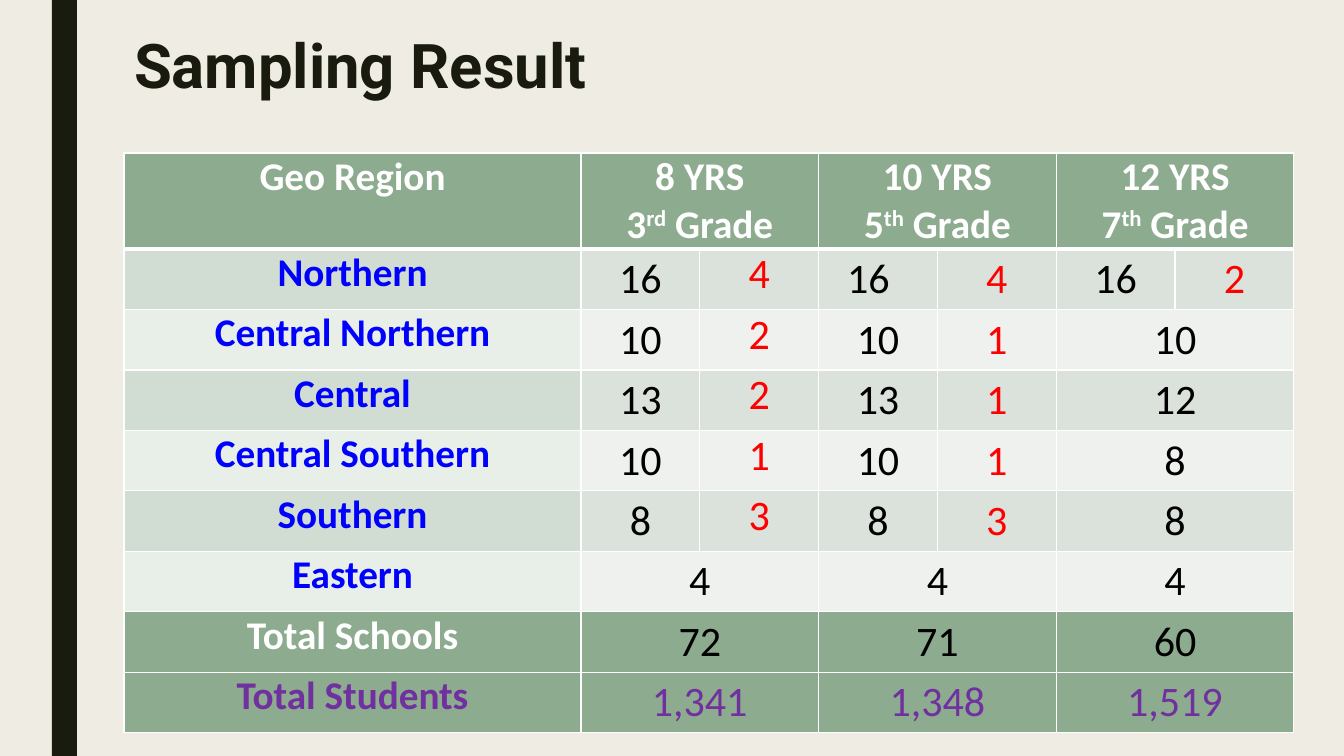
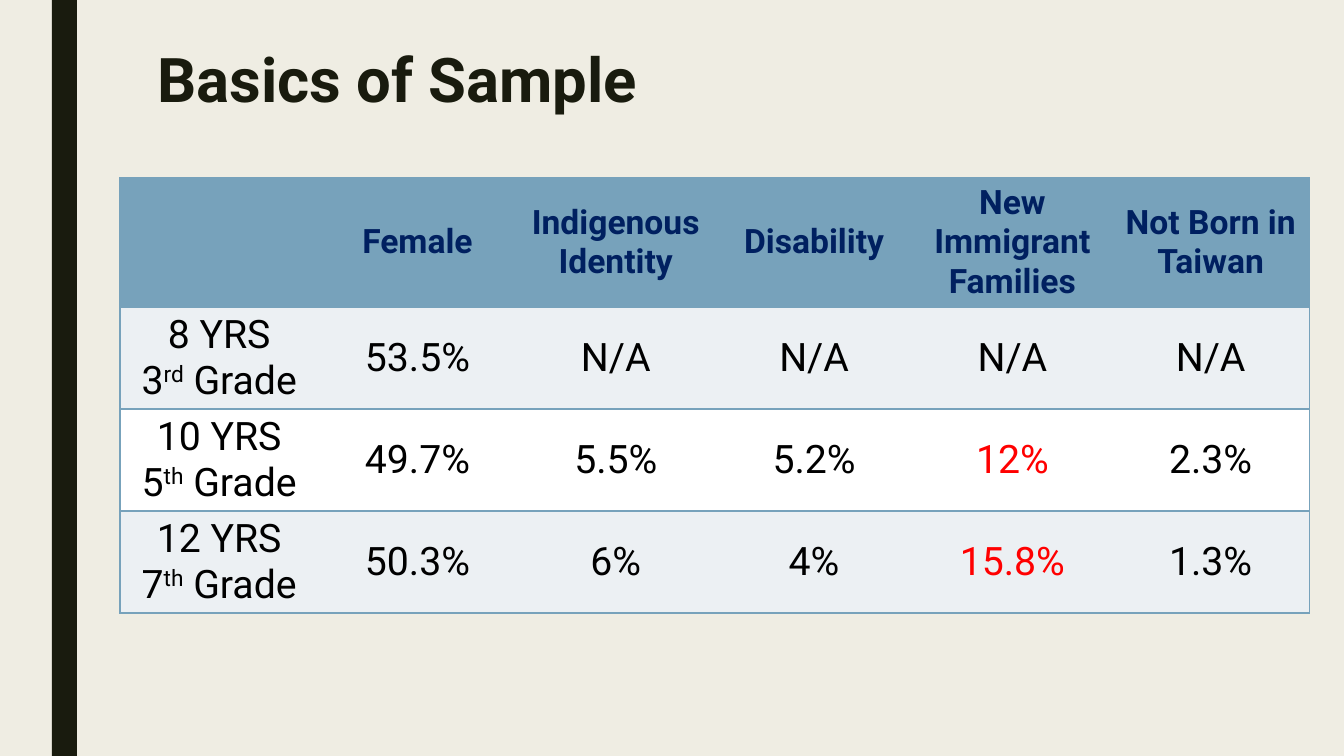
from dataclasses import dataclass

from lxml import etree
from pptx import Presentation
from pptx import util as u
from pptx.dml.color import RGBColor
from pptx.enum import shapes, text
from pptx.oxml import ns

SCALE = 914400 / 100.8
SIDES = ("lnL", "lnR", "lnT", "lnB")
GRADES = ["8 YRS\n3^rd^ Grade", "10 YRS\n5^th^ Grade", "12 YRS\n7^th^ Grade"]


@dataclass(frozen=True)
class Theme:
    """Colours, fonts and type sizes of the deck."""
    paper: str = "EFEDE3"
    ink: str = "191B0E"
    white: str = "FFFFFF"
    black: str = "000000"
    red: str = "FF0000"
    blue: str = "0000FF"
    navy: str = "002060"
    purple: str = "7030A0"
    green: str = "8DAB8E"
    label_bands: tuple = ("D1DDD2", "E8EEE8")
    value_bands: tuple = ("DBE2DB", "EEF1EE")
    steel: str = "77A2BB"
    sample_bands: tuple = ("ECF0F3", "FFFFFF")
    heading_font: str = "Roboto"
    table_font: str = "Calibri"
    title_size: int = 44
    value_size: int = 30
    label_size: int = 28
    header_size: int = 24


THEME = Theme()


def px(length):
    """Turn pixels into EMU."""
    return u.Emu(round(length * SCALE))


def write(frame, content, font, size, color, bold=False):
    """Write lines into a text frame; text between carets is raised."""
    for index, line in enumerate(content.split("\n")):
        para = frame.add_paragraph() if index else frame.paragraphs[0]
        para.font.name, para.font.size, para.font.bold = font, u.Pt(size), bold
        para.alignment = text.PP_ALIGN.CENTER
        for part, piece in enumerate(line.split("^")):
            span = para.add_run()
            span.text = piece
            span.font.color.rgb = RGBColor.from_string(color)
            if part % 2:
                span._r.get_or_add_rPr().set("baseline", "30000")


def fill_cell(cell, color, margins):
    """Set the fill and the horizontal and vertical margins of a cell."""
    cell.fill.solid()
    cell.fill.fore_color.rgb = RGBColor.from_string(color)
    cell.margin_left = cell.margin_right = px(margins[0])
    cell.margin_top = cell.margin_bottom = px(margins[1])


def border_cell(cell, lines):
    """Draw the left, right, top and bottom lines, each (colour, points) or None."""
    properties = cell._tc.get_or_add_tcPr()
    for index, (side, line) in enumerate(zip(SIDES, lines)):
        edge = etree.Element(ns.qn(f"a:{side}"))
        if line:
            edge.set("w", str(u.Pt(line[1])))
            solid = etree.SubElement(edge, ns.qn("a:solidFill"))
            etree.SubElement(solid, ns.qn("a:srgbClr"), val=line[0])
        else:
            edge.set("w", "0")
            etree.SubElement(edge, ns.qn("a:noFill"))
        properties.insert(index, edge)


def add_grid(page, box, rows, columns, header, label_width):
    """Add a plain table with one header row and one label column."""
    left, top, width, height = box
    table = page.shapes.add_table(rows, columns, *map(px, box)).table
    table.first_row = table.horz_banding = False
    for index, row in enumerate(table.rows):
        row.height = px((height - header) / (rows - 1) if index else header)
    for index, column in enumerate(table.columns):
        column.width = px((width - label_width) / (columns - 1) if index else label_width)
    return table


def style_master(deck, page):
    """Give the master its background and the vertical band."""
    master = deck.slide_master
    master.background.fill.solid()
    master.background.fill.fore_color.rgb = RGBColor.from_string(THEME.paper)
    band = page.shapes.add_shape(shapes.MSO_SHAPE.RECTANGLE, px(52), 0, px(25), deck.slide_height)
    band.shadow.inherit = False
    band.fill.solid()
    band.fill.fore_color.rgb = RGBColor.from_string(THEME.ink)
    band.line.fill.background()
    master.shapes.element.insert(2, band.element)


def add_title(page, content, box):
    """Place and format the title placeholder."""
    title = page.shapes.title
    title.left, title.top, title.width, title.height = map(px, box)
    frame = title.text_frame
    frame.auto_size = text.MSO_AUTO_SIZE.NONE
    frame.vertical_anchor = text.MSO_ANCHOR.TOP
    write(frame, content, THEME.heading_font, THEME.title_size, THEME.ink, True)
    frame.paragraphs[0].alignment = text.PP_ALIGN.LEFT
    frame.paragraphs[0].line_spacing = 0.89


def region_table(page, box):
    """Add the table of schools by region; each grade spans two columns."""
    regions = [
        ("Northern", "16", "4", "16", "4", "16", "2"),
        ("Central Northern", "10", "2", "10", "1", "10", None),
        ("Central", "13", "2", "13", "1", "12", None),
        ("Central Southern", "10", "1", "10", "1", "8", None),
        ("Southern", "8", "3", "8", "3", "8", None),
        ("Eastern", "4", None, "4", None, "4", None),
    ]
    totals = [
        ("Total Schools", "72", None, "71", None, "60", None),
        ("Total Students", "1,341", None, "1,348", None, "1,519", None),
    ]
    header = ["Geo Region"]
    for grade in GRADES:
        header += [grade, None]
    records = [header, *regions, *totals]
    table = add_grid(page, box, len(records), len(header), 96, 457)
    thin, thick = (THEME.white, 1), (THEME.white, 3)
    for row, record in enumerate(records):
        solid = row == 0 or row > len(regions)
        for column, content in enumerate(record):
            cell = table.cell(row, column)
            bands = THEME.value_bands if column else THEME.label_bands
            fill_cell(cell, THEME.green if solid else bands[(row - 1) % 2], (2, 0))
            border_cell(cell, (thin, thin, thick if row == 1 else thin, thick if row == 0 else thin))
            if content is None:
                table.cell(row, column - 1).merge(cell)
                continue
            is_label = row == 0 or column == 0
            if row == len(records) - 1:
                color = THEME.purple
            elif is_label:
                color = THEME.white if solid else THEME.blue
            else:
                color = THEME.black if column % 2 else THEME.red
            size = THEME.label_size if is_label else THEME.value_size
            write(cell.text_frame, content, THEME.table_font, size, color, is_label)
            at_top = is_label or column == 2
            cell.vertical_anchor = text.MSO_ANCHOR.TOP if at_top else text.MSO_ANCHOR.MIDDLE
    table.cell(1, 3).margin_right = px(21)


def sample_table(page, box):
    """Add the table of sample shares by grade."""
    header = ("", "Female", "Indigenous Identity", "Disability",
              "New Immigrant Families", "Not Born in Taiwan")
    shares = [
        ("53.5%", "N/A", "N/A", "N/A", "N/A"),
        ("49.7%", "5.5%", "5.2%", "12%", "2.3%"),
        ("50.3%", "6%", "4%", "15.8%", "1.3%"),
    ]
    records = [header, *((grade, *share) for grade, share in zip(GRADES, shares))]
    last = len(header) - 1
    table = add_grid(page, box, len(records), len(header), 129, box[2] / len(header))
    line = (THEME.steel, 1)
    for row, record in enumerate(records):
        for column, content in enumerate(record):
            cell = table.cell(row, column)
            fill_cell(cell, THEME.sample_bands[(row - 1) % 2] if row else THEME.steel, (10, 5))
            border_cell(cell, (None if column else line, line if column == last else None, line, line))
            cell.vertical_anchor = text.MSO_ANCHOR.MIDDLE
            if not content:
                continue
            if row == 0:
                color, size = THEME.navy, THEME.header_size
            else:
                notable = column == 4 and content != "N/A"
                color, size = THEME.red if notable else THEME.black, THEME.label_size
            write(cell.text_frame, content, THEME.heading_font, size, color, row == 0)


def main():
    """Build and save the deck."""
    deck = Presentation()
    deck.slide_width, deck.slide_height = px(1344), px(756)
    layout = deck.slide_layouts[5]
    result, basics = (deck.slides.add_slide(layout) for _ in range(2))
    style_master(deck, result)
    add_title(result, "Sampling Result", (124, 31, 1058, 163))
    region_table(result, (124, 153, 1170, 580))
    add_title(basics, "Basics of Sample", (147, 45, 1058, 163))
    sample_table(basics, (120, 178, 1190, 435))
    deck.save("out.pptx")


if __name__ == "__main__":
    main()
